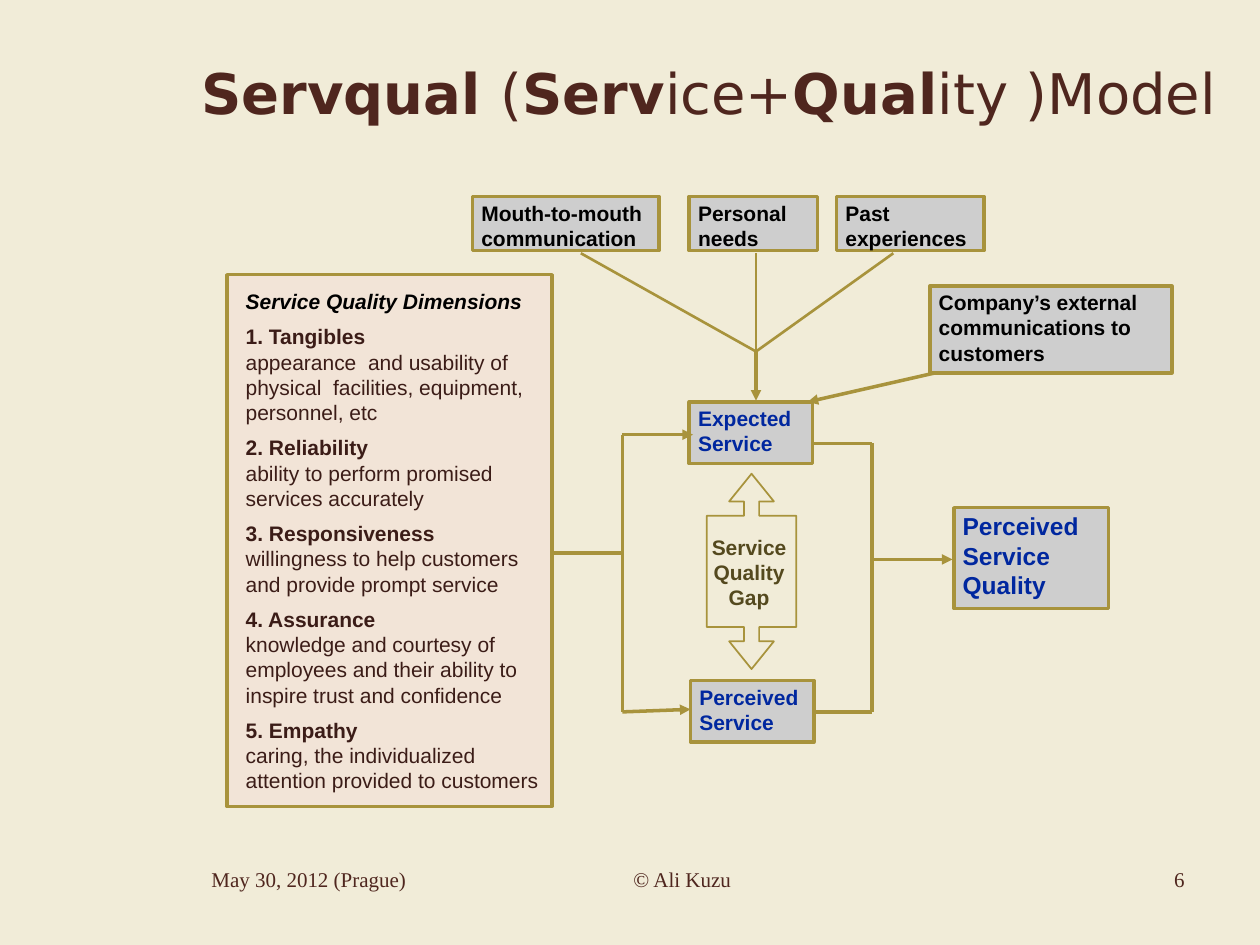
from lxml import etree
from pptx import Presentation
from pptx.dml.color import RGBColor
from pptx.enum import shapes, text
from pptx.oxml import ns
from pptx.util import Inches, Pt

COLORS = {"bg": "F1ECD8", "brown": "4F261E", "body": "3B1C17", "gold": "A8933C",
          "panel": "F2E4D7", "gray": "CECECE", "blue": "00279F",
          "black": "000000", "olive": "54491E"}
DIMENSIONS = [
    ("1. Tangibles", "appearance  and usability of physical  facilities, equipment, personnel, etc"),
    ("2. Reliability", "ability to perform promised services accurately"),
    ("3. Responsiveness", "willingness to help customers and provide prompt service"),
    ("4. Assurance", "knowledge and courtesy of employees and their ability to inspire trust and confidence"),
    ("5. Empathy", "caring, the individualized attention provided to customers"),
]
ALIGN = text.PP_ALIGN


def rgb(name):
    return RGBColor.from_string(COLORS[name])


def set_font(font, size, color, name="Arial", bold=False, italic=False):
    font.size, font.name = Pt(size), name
    font.bold, font.italic = bold, italic
    font.color.rgb = rgb(color)


def set_frame(sp, dx=0.07, dy=0.03, anchor=text.MSO_ANCHOR.TOP):
    tf = sp.text_frame
    tf.word_wrap = True
    tf.vertical_anchor = anchor
    tf.margin_left = tf.margin_right = Inches(dx)
    tf.margin_top = tf.margin_bottom = Inches(dy)
    return tf


def add_text(s, box, words, size, color, name="Arial", bold=False, align=ALIGN.LEFT):
    sp = s.shapes.add_textbox(*map(Inches, box))
    p = set_frame(sp, 0.1, 0.05).paragraphs[0]
    p.text, p.alignment = words, align
    set_font(p.font, size, color, name, bold)
    return sp


def add_box(s, box, fill, width=2, kind=shapes.MSO_SHAPE.RECTANGLE):
    sp = s.shapes.add_shape(kind, *map(Inches, box))
    sp.shadow.inherit = False
    if fill:
        sp.fill.solid()
        sp.fill.fore_color.rgb = rgb(fill)
    else:
        sp.fill.background()
    sp.line.color.rgb = rgb("gold")
    sp.line.width = Pt(width)
    return sp


def add_label(s, box, words, color, size=12):
    p = set_frame(add_box(s, box, "gray")).paragraphs[0]
    p.text, p.alignment, p.line_spacing = words, ALIGN.LEFT, Pt(size * 1.2)
    set_font(p.font, size, color, bold=True)


def add_line(s, x1, y1, x2, y2, width=2, arrow=False):
    c = s.shapes.add_connector(shapes.MSO_CONNECTOR.STRAIGHT,
                               *map(Inches, (x1, y1, x2, y2)))
    c.line.color.rgb = rgb("gold")
    c.line.width = Pt(width)
    if arrow:
        etree.SubElement(c.line._get_or_add_ln(), ns.qn("a:tailEnd"), type="triangle")
    etree.SubElement(c._element.spPr, ns.qn("a:effectLst"))


def add_title(s, box):
    sp = s.shapes.add_textbox(*map(Inches, box))
    p = set_frame(sp, 0.1, 0.05, text.MSO_ANCHOR.MIDDLE).paragraphs[0]
    parts = ["Servqual ", "(", "Serv", "ice+", "Qual", "ity )Model"]
    for i, part in enumerate(parts):
        r = p.add_run()
        r.text = part
        set_font(r.font, 32, "brown", "DejaVu Sans", bold=i % 2 == 0)


def add_footer(s, x, y):
    for dx, width, words, align in [(0, 2.08, "May 30, 2012 (Prague)", ALIGN.LEFT),
                                    (2.25, 3.17, "© Ali Kuzu", ALIGN.CENTER),
                                    (5.59, 2.33, "6", ALIGN.RIGHT)]:
        add_text(s, (x + dx, y, width, 0.52), words, 12, "brown",
                 "Times New Roman", align=align)


def add_dimensions(s, box):
    tf = set_frame(add_box(s, box, "panel"))
    tf.margin_left = Inches(0.15)
    lines = [("Service Quality Dimensions", "black", True, True)]
    for heading, detail in DIMENSIONS:
        lines += [(heading, "body", True, False), (detail, "body", False, False)]
    for i, (words, color, bold, italic) in enumerate(lines):
        p = tf.add_paragraph() if i else tf.paragraphs[0]
        p.text, p.alignment = words, ALIGN.LEFT
        p.line_spacing = Pt(20.2 if bold else 14.4)
        set_font(p.font, 12, color, bold=bold, italic=italic)


def add_influences(s, x, y):
    for dx, width, words in [(0, 1.48, "Mouth-to-mouth communication"),
                             (1.72, 1.02, "Personal needs"),
                             (2.89, 1.17, "Past experiences")]:
        add_label(s, (x + dx, y, width, 0.43), words, "black")
    add_label(s, (x + 3.63, y + 0.71, 1.92, 0.69),
              "Company’s external communications to customers", "black")
    join_x, join_y = x + 2.25, y + 1.23
    for dx in (0.86, 2.25, 3.34):
        add_line(s, x + dx, y + 0.45, join_x, join_y, 1.5)
    add_line(s, join_x, join_y, join_x, y + 1.62, arrow=True)
    add_line(s, x + 3.67, y + 1.4, x + 2.66, y + 1.63, arrow=True)


def add_gap_model(s, x, y):
    left, right = x + 0.57, x + 2.55
    top, middle, bottom = y + 0.26, y + 1.2, y + 2.46
    add_label(s, (x + 1.1, y, 0.98, 0.49), "Expected Service", "blue")
    add_label(s, (x + 1.11, y + 2.21, 0.98, 0.49), "Perceived Service", "blue")
    add_label(s, (x + 3.2, y + 0.84, 1.23, 0.8), "Perceived Service Quality", "blue", 14)

    add_line(s, x, middle, left, middle, 2.25)
    add_line(s, left, top, left, bottom)
    add_line(s, left, top, x + 1.13, top, arrow=True)
    add_line(s, left, bottom, x + 1.11, y + 2.44, arrow=True)
    add_line(s, right, y + 0.33, right, bottom)
    for line_y in (y + 0.33, bottom):
        add_line(s, x + 2.09, line_y, right, line_y)
    add_line(s, right, y + 1.25, x + 3.19, y + 1.25, arrow=True)

    callout = add_box(s, (x + 1.24, y + 0.57, 0.71, 1.55), None, 1,
                      shapes.MSO_SHAPE.UP_DOWN_ARROW_CALLOUT)
    for i, value in enumerate((0.17, 0.25, 0.31, 0.57)):
        callout.adjustments[i] = value
    sp = add_text(s, (x + 1.18, y + 1.02, 0.79, 0.7), "Service Quality Gap",
                  12, "olive", bold=True, align=ALIGN.CENTER)
    set_frame(sp).paragraphs[0].line_spacing = Pt(14.4)


def main():
    prs = Presentation()
    prs.slide_width, prs.slide_height = Inches(10), Inches(7.5)
    s = prs.slides.add_slide(prs.slide_layouts[6])
    s.background.fill.solid()
    s.background.fill.fore_color.rgb = rgb("bg")
    add_title(s, (1.5, 0.3, 8.27, 0.87))
    add_footer(s, 1.58, 6.83)
    add_dimensions(s, (1.8, 2.18, 2.58, 4.22))
    add_influences(s, 3.75, 1.56)
    add_gap_model(s, 4.37, 3.19)
    prs.save("out.pptx")


if __name__ == "__main__":
    main()
